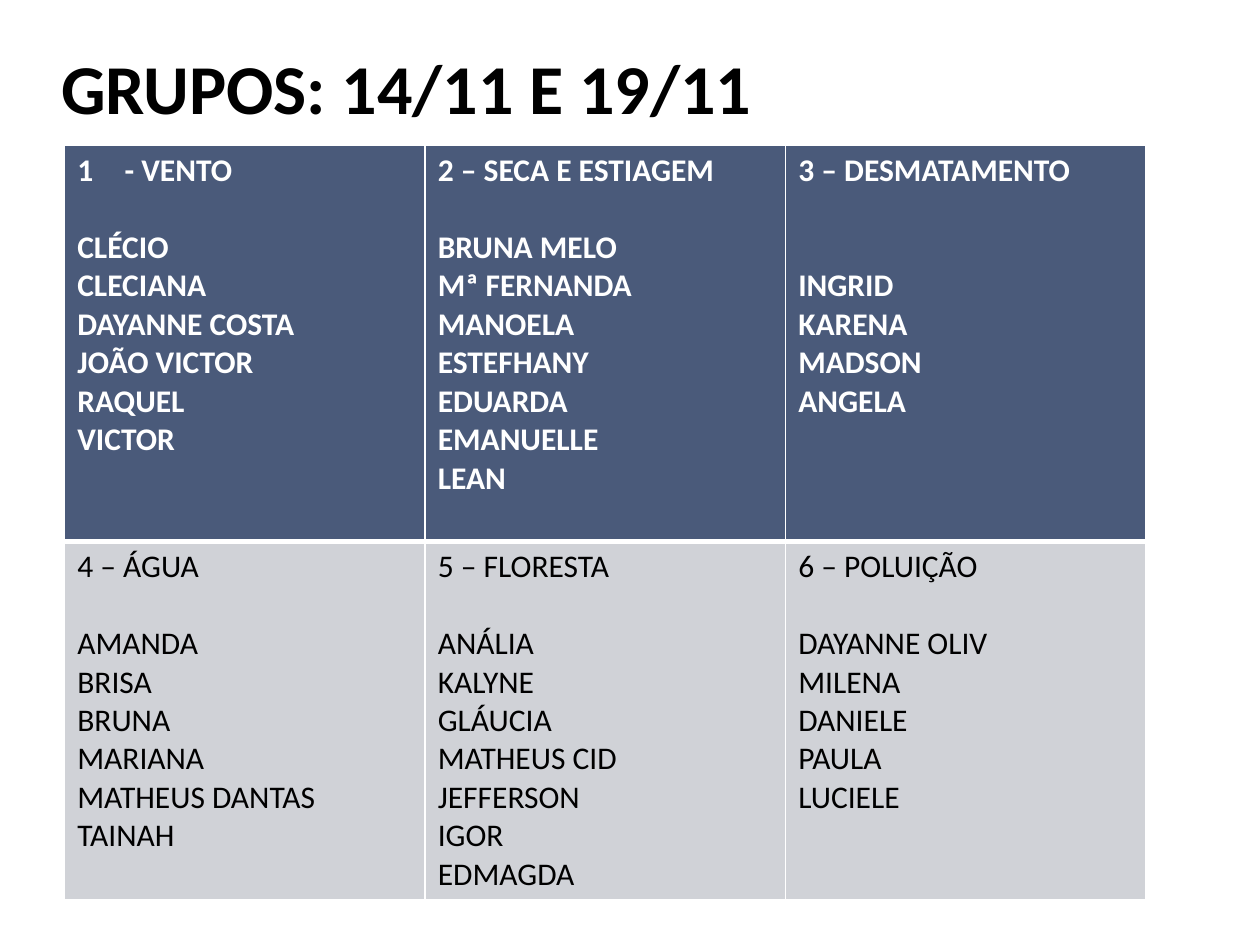
from lxml.etree import SubElement
from pptx import Presentation
from pptx.dml.color import RGBColor
from pptx.enum.text import MSO_ANCHOR
from pptx.oxml import parse_xml
from pptx.oxml.ns import nsdecls, qn
from pptx.util import Pt

TITLE = "GRUPOS: 14/11 E 19/11"
# Each group: heading, blank lines below it, names
GROUPS = [
    [("- VENTO", 1, ["CLÉCIO", "CLECIANA", "DAYANNE COSTA", "JOÃO VICTOR",
                     "RAQUEL", "VICTOR"]),
     ("2 – SECA E ESTIAGEM", 1, ["BRUNA MELO", "Mª FERNANDA", "MANOELA",
                                 "ESTEFHANY", "EDUARDA", "EMANUELLE", "LEAN"]),
     ("3 – DESMATAMENTO", 2, ["INGRID", "KARENA", "MADSON", "ANGELA"])],
    [("4 – ÁGUA", 1, ["AMANDA", "BRISA", "BRUNA", "MARIANA",
                      "MATHEUS DANTAS", "TAINAH"]),
     ("5 – FLORESTA", 1, ["ANÁLIA", "KALYNE", "GLÁUCIA", "MATHEUS CID",
                          "JEFFERSON", "IGOR", "EDMAGDA"]),
     ("6 – POLUIÇÃO", 1, ["DAYANNE OLIV", "MILENA", "DANIELE", "PAULA",
                          "LUCIELE"])],
]

FONT = "Calibri"
BLACK = RGBColor(0x00, 0x00, 0x00)
WHITE = RGBColor(0xFF, 0xFF, 0xFF)
BLUE = RGBColor(0x4A, 0x5A, 0x7A)
GREY = RGBColor(0xD0, 0xD2, 0xD7)
# Each row: height, fill, text colour, bold, top border, bottom border
ROW_STYLES = [(226.4, BLUE, WHITE, True, 1, 3),
              (204.8, GREY, BLACK, False, 3, 1)]
COLUMN_WIDTH = 206
LINE_HEIGHT = 22


def style(paragraph, size, color, bold):
    for span in paragraph.runs:
        span.font.name = FONT
        span.font.size = Pt(size)
        span.font.bold = bold
        span.font.color.rgb = color


def set_borders(cell, widths):
    properties = cell._tc.get_or_add_tcPr()
    for index, (side, width) in enumerate(widths.items()):
        properties.insert(index, parse_xml(
            f'<a:ln{side} {nsdecls("a")} w="{Pt(width)}"><a:solidFill>'
            f'<a:srgbClr val="{WHITE}"/></a:solidFill></a:ln{side}>'))


def number(paragraph, indent):
    properties = paragraph._p.get_or_add_pPr()
    properties.set("marL", str(Pt(indent)))
    properties.set("indent", str(-Pt(indent)))
    SubElement(properties, qn("a:buFont"), typeface="+mj-lt")
    SubElement(properties, qn("a:buAutoNum"), type="arabicPlain")


deck = Presentation()
deck.slide_width, deck.slide_height = Pt(720), Pt(540)
page = deck.slides.add_slide(deck.slide_layouts[6])

# Title
box = page.shapes.add_textbox(Pt(28), Pt(18), Pt(605), Pt(59))
frame = box.text_frame
frame.word_wrap = True
frame.vertical_anchor = MSO_ANCHOR.BOTTOM
frame.text = TITLE
style(frame.paragraphs[0], 40, BLACK, True)

# Table of groups
columns = len(GROUPS[0])
table = page.shapes.add_table(
    len(GROUPS), columns, Pt(37), Pt(83), Pt(COLUMN_WIDTH * columns),
    Pt(sum(row_style[0] for row_style in ROW_STYLES))).table
for column in table.columns:
    column.width = Pt(COLUMN_WIDTH)

for r, (groups, row_style) in enumerate(zip(GROUPS, ROW_STYLES)):
    height, fill, color, bold, top, bottom = row_style
    table.rows[r].height = Pt(height)
    for c, (heading, gap, names) in enumerate(groups):
        cell = table.cell(r, c)
        cell.fill.solid()
        cell.fill.fore_color.rgb = fill
        set_borders(cell, {"L": 1, "R": 1, "T": top, "B": bottom})
        cell.text_frame.text = "\n".join([heading, *names])
        paragraphs = cell.text_frame.paragraphs
        paragraphs[1].space_before = Pt(gap * LINE_HEIGHT)
        for paragraph in paragraphs:
            style(paragraph, 18, color, bold)

# The first heading carries an automatic number
number(table.cell(0, 0).text_frame.paragraphs[0], 27)

deck.save("out.pptx")
